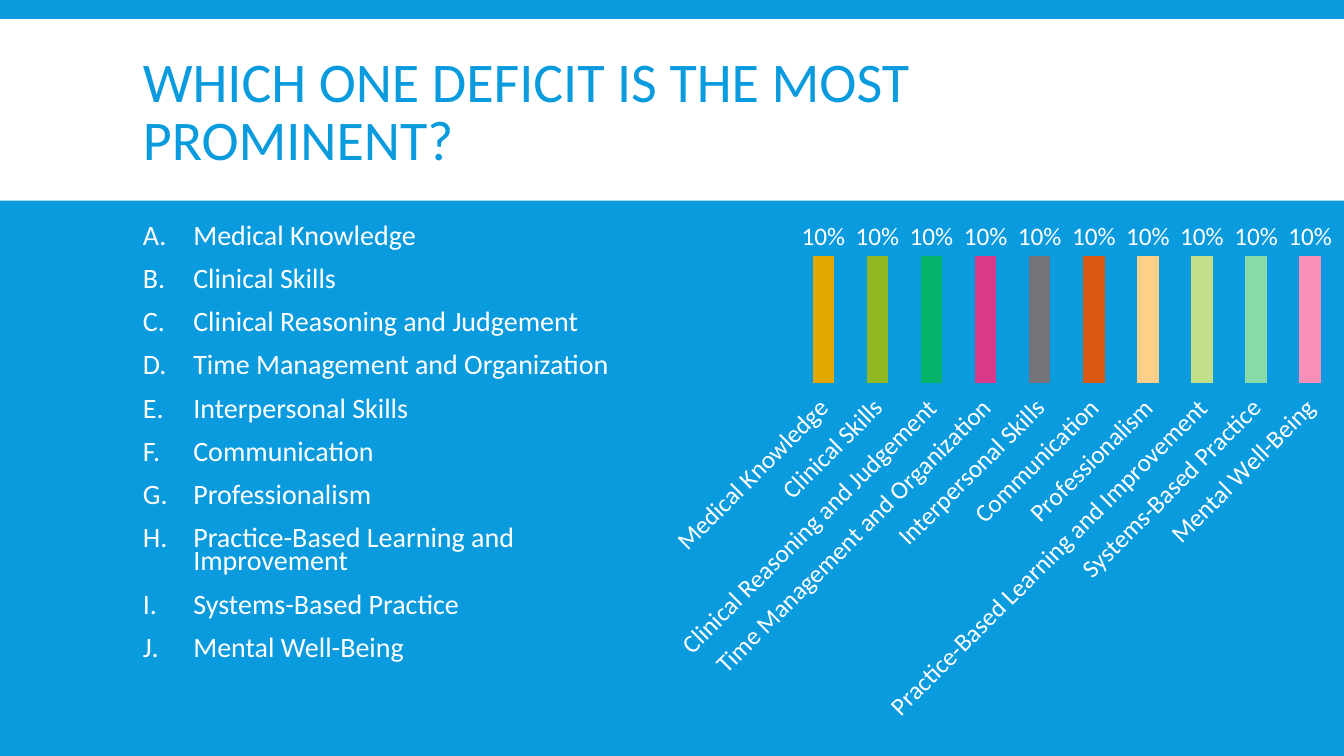
from dataclasses import dataclass

from lxml.etree import SubElement
from pptx import Presentation
from pptx.chart.data import CategoryChartData
from pptx.dml.color import RGBColor
from pptx.enum.chart import XL_CHART_TYPE as ChartType
from pptx.enum.chart import XL_LABEL_POSITION as LabelPosition
from pptx.enum.chart import XL_TICK_LABEL_POSITION as TickLabels
from pptx.enum.chart import XL_TICK_MARK as TickMark
from pptx.enum.shapes import MSO_SHAPE as Preset
from pptx.enum.text import MSO_ANCHOR as Anchor
from pptx.oxml.ns import qn
from pptx.slide import Slide
from pptx.util import Pt

FONT = "Calibri"
COLORS = {"blue": "099BDD", "white": "FFFFFF"}
TITLE = "WHICH ONE DEFICIT IS THE MOST PROMINENT?"


@dataclass
class Deficit:
    name: str
    color: str
    share: float = 0.1


@dataclass
class Area:
    left: float
    top: float
    width: float
    height: float

    def lengths(self) -> tuple:
        return Pt(self.left), Pt(self.top), Pt(self.width), Pt(self.height)


@dataclass
class TextStyle:
    size: float
    color: str
    line_spacing: float
    before: float = 0
    after: float = 0
    anchor: Anchor = Anchor.TOP
    hanging: float = 0


DEFICITS = [
    Deficit("Medical Knowledge", "E2A800"),
    Deficit("Clinical Skills", "92B823"),
    Deficit("Clinical Reasoning and Judgement", "07B46A"),
    Deficit("Time Management and Organization", "D83988"),
    Deficit("Interpersonal Skills", "737379"),
    Deficit("Communication", "DA5A14"),
    Deficit("Professionalism", "FFD088"),
    Deficit("Practice-Based Learning and Improvement", "C0DF88"),
    Deficit("Systems-Based Practice", "88DBA8"),
    Deficit("Mental Well-Being", "F78FB8"),
]

BAND = Area(0, 13.7, 960, 129.6)
TITLE_AREA = Area(95, 22.3, 770.4, 118.8)
LIST_AREA = Area(95, 158.4, 385.2, 331.2)
CHART_AREA = Area(475.2, 135.4, 480, 404.6)

TITLE_STYLE = TextStyle(40, "blue", 0.85, anchor=Anchor.MIDDLE)
LIST_STYLE = TextStyle(20, "white", 0.7, before=12, after=2, hanging=36)


def rgb(name: str) -> RGBColor:
    return RGBColor.from_string(COLORS[name])


def add_band(page: Slide, area: Area) -> None:
    band = page.shapes.add_shape(Preset.RECTANGLE, *area.lengths())
    band.shadow.inherit = False
    band.fill.solid()
    band.fill.fore_color.rgb = rgb("white")
    band.line.fill.background()


def add_text(page: Slide, area: Area, lines: list[str], style: TextStyle) -> None:
    box = page.shapes.add_textbox(*area.lengths())
    frame = box.text_frame
    frame.word_wrap = True
    frame.vertical_anchor = style.anchor
    frame.text = "\n".join(lines)
    for para in frame.paragraphs:
        para.line_spacing = style.line_spacing
        para.space_before = Pt(style.before)
        para.space_after = Pt(style.after)
        for span in para.runs:
            span.font.name = FONT
            span.font.size = Pt(style.size)
            span.font.color.rgb = rgb(style.color)
        if style.hanging:
            # Lettered list with a hanging indent
            props = para._p.get_or_add_pPr()
            props.set("marL", str(Pt(style.hanging)))
            props.set("indent", str(-Pt(style.hanging)))
            bullet_color = SubElement(props, qn("a:buClr"))
            SubElement(bullet_color, qn("a:srgbClr"), val=COLORS[style.color])
            SubElement(props, qn("a:buAutoNum"), type="alphaUcPeriod")


def set_plot_layout(plot_area, x: float, y: float, w: float, h: float) -> None:
    layout = plot_area.find(qn("c:layout"))
    if layout is None:
        layout = SubElement(plot_area, qn("c:layout"))
        plot_area.insert(0, layout)
    manual = SubElement(layout, qn("c:manualLayout"))
    settings = {"layoutTarget": "inner", "xMode": "edge", "yMode": "edge",
                "x": x, "y": y, "w": w, "h": h}
    for tag, value in settings.items():
        SubElement(manual, qn(f"c:{tag}"), val=str(value))


def add_bar_chart(page: Slide, area: Area, deficits: list[Deficit]) -> None:
    data = CategoryChartData(number_format="0%")
    data.categories = [deficit.name for deficit in deficits]
    data.add_series("Series 1", [deficit.share for deficit in deficits])
    chart = page.shapes.add_chart(
        ChartType.COLUMN_CLUSTERED, *area.lengths(), data).chart
    chart.has_legend = False
    chart.has_title = False
    chart.font.name = FONT
    chart.font.size = Pt(18)
    chart.font.color.rgb = rgb("white")

    # Bars and their labels
    plot = chart.plots[0]
    plot.gap_width = 150
    plot.vary_by_categories = False
    plot.has_data_labels = True
    labels = plot.data_labels
    labels.show_value = True
    labels.number_format = "0%"
    labels.number_format_is_linked = False
    labels.position = LabelPosition.OUTSIDE_END
    for index, deficit in enumerate(deficits):
        fill = plot.series[0].points[index].format.fill
        fill.solid()
        fill.fore_color.rgb = RGBColor.from_string(deficit.color)

    # Axes
    for axis in (chart.category_axis, chart.value_axis):
        axis.has_major_gridlines = False
        axis.major_tick_mark = TickMark.OUTSIDE
        axis.format.line.fill.background()
    chart.value_axis.minimum_scale = 0
    chart.value_axis.maximum_scale = 0.12
    chart.value_axis.tick_label_position = TickLabels.NONE
    names = chart.category_axis.tick_labels
    names.font.size = Pt(18)
    names.font.name = FONT
    names.font.color.rgb = rgb("white")
    name_body = chart.category_axis._element.find(qn("c:txPr")).find(qn("a:bodyPr"))
    name_body.set("rot", str(-45 * 60000))
    name_body.set("vert", "horz")

    plot_area = chart._chartSpace.chart.plotArea
    set_plot_layout(plot_area, 0.195, 0.072, 0.805, 0.269)


def main() -> None:
    deck = Presentation()
    deck.slide_width, deck.slide_height = Pt(960), Pt(540)
    page = deck.slides.add_slide(deck.slide_layouts[6])
    page.background.fill.solid()
    page.background.fill.fore_color.rgb = rgb("blue")

    add_band(page, BAND)
    add_bar_chart(page, CHART_AREA, DEFICITS)
    add_text(page, TITLE_AREA, [TITLE], TITLE_STYLE)
    add_text(page, LIST_AREA, [deficit.name for deficit in DEFICITS], LIST_STYLE)
    deck.save("out.pptx")


if __name__ == "__main__":
    main()
